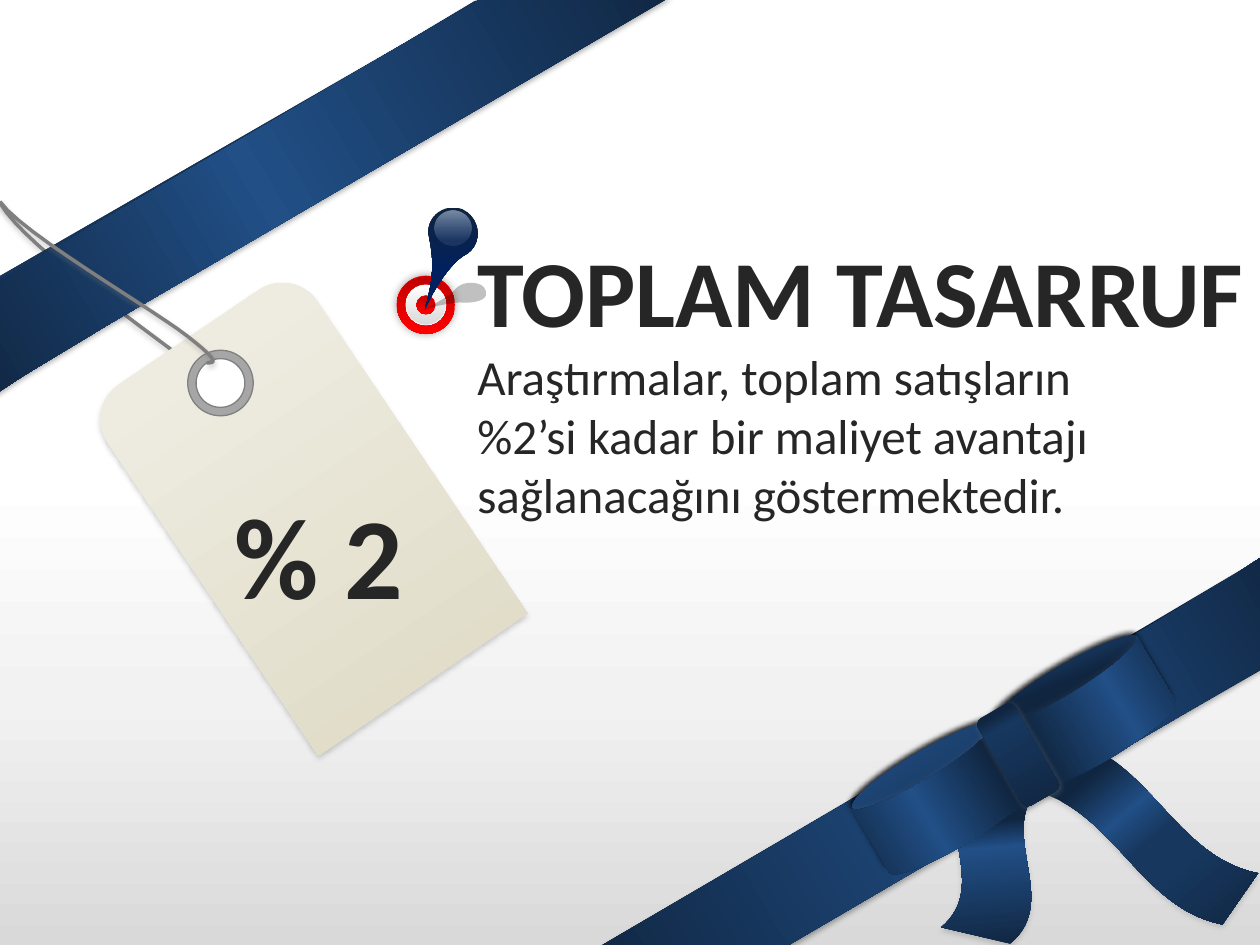
"""Builds a savings slide with ribbons, a price tag, a bow and a pinned target."""
import math
from lxml import etree
from pptx import Presentation
from pptx import util as u
from pptx.dml.color import RGBColor
from pptx.enum import shapes, text
from pptx.oxml.ns import qn

HUES = {
    "white": "FFFFFF", "pale": "F2F2F2", "mist": "D9D9D9", "ash": "A6A6A6",
    "grey": "808080", "cord": "7F7F7F", "ink": "262626", "soot": "0D0D0D",
    "black": "000000", "night": "0F243E", "navy": "10253F", "deep": "17375E",
    "blue": "214F86", "royal": "002060", "cream": "EEECE1", "sand": "DDD9C3",
    "wine": "C00000", "red": "FF0000", "sky": "9AB5E4", "haze": "C2D1ED",
    "frost": "E1E8F5",
}
KIND = shapes.MSO_SHAPE
deck = Presentation()
deck.slide_width, deck.slide_height = u.Inches(10), u.Inches(7.5)
cell = deck.slide_width / 10
slide = deck.slides.add_slide(deck.slide_layouts[6])


def draw(form, box, turn=0, fill=None, ang=0, line=None, shade=None, adj=(), flip=False):
    """Draws a preset, or an outline of points and curves, in grid cells."""
    left, top, wide, high = box
    if isinstance(form, list):
        dots = []
        for step in form:
            if len(step) == 2:
                dots.append(step)
                continue
            knots = [dots[-1], step[:2], step[2:4], step[4:]]
            for t in (n / 12 for n in range(1, 13)):
                mix = ((1 - t) ** 3, 3 * t * (1 - t) ** 2, 3 * t * t * (1 - t), t ** 3)
                dots.append(tuple(sum(m * k[i] for m, k in zip(mix, knots)) for i in (0, 1)))
        midx, midy = left + wide / 2, top + high / 2
        cos, sin = math.cos(math.radians(turn)), math.sin(math.radians(turn))
        flat = [(round((midx + (x - midx) * cos + (y - midy) * sin) * cell),
                 round((midy - (x - midx) * sin + (y - midy) * cos) * cell)) for x, y in dots]
        pen = slide.shapes.build_freeform(*flat[0])
        pen.add_line_segments(flat[1:], close=fill is not None)
        item = pen.convert_to_shape()
    else:
        item = slide.shapes.add_shape(form, *(round(v * cell) for v in box))
    item.rotation = turn
    item.shadow.inherit = False
    for i, value in enumerate(adj):
        item.adjustments[i] = value
    prop = item._element.spPr
    if flip:
        prop.find(qn("a:xfrm")).set("flipH", "1")
    if fill is None:
        item.fill.background()
    elif isinstance(fill, str):
        item.fill.solid()
        item.fill.fore_color.rgb = RGBColor.from_string(HUES[fill])
    else:
        item.fill.gradient()
        prop.find(".//" + qn("a:lin")).set("ang", str(round(ang * 60000)))
        stops = prop.find(".//" + qn("a:gsLst"))
        for old in list(stops):
            stops.remove(old)
        for place, hue, *clear in fill:
            stop = etree.SubElement(stops, qn("a:gs"), pos=str(place * 1000))
            tint = etree.SubElement(stop, qn("a:srgbClr"), val=HUES[hue])
            for share in clear:
                etree.SubElement(tint, qn("a:alpha"), val=str(share * 1000))
    if line:
        item.line.color.rgb = RGBColor.from_string(HUES[line[0]])
        item.line.width = u.Pt(line[1])
    else:
        item.line.fill.background()
    if shade:
        hue, share, blur, dist, way = shade
        cast = etree.SubElement(prop.find(qn("a:effectLst")), qn("a:outerShdw"),
                                blurRad=str(u.Pt(blur)), dist=str(u.Pt(dist)),
                                dir=str(way * 60000), algn="ctr", rotWithShape="0")
        tint = etree.SubElement(cast, qn("a:srgbClr"), val=HUES[hue])
        etree.SubElement(tint, qn("a:alpha"), val=str(share * 1000))


def write(box, rows):
    """Writes one paragraph per row of words, size and weight."""
    frame = slide.shapes.add_textbox(*(round(v * cell) for v in box)).text_frame
    frame.word_wrap = True
    frame.auto_size = text.MSO_AUTO_SIZE.SHAPE_TO_FIT_TEXT
    for i, (words, size, bold) in enumerate(rows):
        para = frame.add_paragraph() if i else frame.paragraphs[0]
        run = para.add_run()
        run.text = words
        for key, value in {"name": "Calibri", "size": u.Pt(size), "bold": bold}.items():
            setattr(run.font, key, value)
        run.font.color.rgb = RGBColor.from_string(HUES["ink"])


soft = ("grey", 35, 3.1, 1.8, 90)
dark = ("black", 35, 3.1, 1.8, 90)
thread = {"line": ("cord", 2), "shade": ("grey", 38, 3.1, 1.6, 90)}

draw(KIND.RECTANGLE, (0, 0, 10, 7.5), 180,
     [(0, "white"), (50, "white"), (74, "pale"), (100, "mist")], 270)
draw([(1.42, 2.82), (0.79, 2.35, 0.16, 1.89, 0, 1.61)], (0, 1.61, 1.42, 1.21), **thread)

base = [(5.2, 0.01), (0.87, 2.55), (-0.01, 3.07), (-0.02, 2.2), (3.21, 0.34), (3.78, 0)]
satin = [(5.32, -0.05), (0.86, 2.55), (0.18, 2.96), (-0.05, 3.11), (-0.09, 2.25), (3.84, -0.05)]
sheen = [(0, "night"), (57, "blue"), (100, "night")]
for turn, hue, edge in ((149.5, "deep", 0.25), (329.5, "night", 0.75)):
    for band, box, look in (
            (base, (-0.62, 0.84, 6.04, 0.76), {"fill": hue, "line": ("night", edge)}),
            (satin, (-0.67, 0.83, 6.24, 0.76), {"fill": sheen, "shade": dark})):
        if turn > 180:
            band = [(9.98 - x, 7.52 - y) for x, y in band]
            box = (9.98 - box[0] - box[2], 7.52 - box[1] - box[3], *box[2:])
        draw(band, box, turn, **look)

draw(KIND.WAVE, (7.22, 6.4, 1.32, 0.77), 102,
     [(0, "navy"), (54, "blue"), (68, "navy"), (100, "navy")], 17,
     shade=soft, adj=(0.134, 0.005), flip=True)
draw(KIND.WAVE, (8.14, 6.27, 1.87, 0.66), 34.8,
     [(0, "navy"), (25, "navy"), (42, "blue"), (54, "deep"), (66, "deep"), (100, "navy")], 15,
     shade=soft, adj=(0.125, 0))
for box, turn, fill, ang, shade in (
        ((8.23, 4.93, 0.7, 1.33), 59.8, [(0, "blue"), (12, "blue"), (38, "navy"), (100, "navy")],
         8, ("black", 85, 3.1, 1.8, 225)),
        ((8.28, 5.04, 0.72, 1.32), 238.9, [(0, "navy"), (24, "navy"), (64, "blue"), (100, "navy")],
         90, ("grey", 10, 3.1, 1.8, 200)),
        ((7.11, 5.61, 0.7, 1.33), 59.8, [(0, "blue"), (8, "blue"), (100, "navy")],
         356, ("black", 87, 3.1, 1.8, 225)),
        ((7.14, 5.71, 0.72, 1.33), 238.9, [(0, "navy"), (41, "blue"), (76, "navy"), (100, "navy")],
         90, ("grey", 10, 3.1, 1.8, 231))):
    draw(KIND.FLOWCHART_STORED_DATA, box, turn, fill, ang, shade=shade)
draw(KIND.ROUNDED_RECTANGLE, (7.68, 5.82, 0.8, 0.34), 60.2,
     [(0, "navy"), (16, "navy"), (27, "deep"), (100, "navy")], 1,
     shade=("grey", 43, 4, 1, 45), adj=(0.167,))

tag = [(0.95, 3.05), (2.06, 2.3), (2.21, 2.2, 2.42, 2.24, 2.52, 2.39), (4.19, 4.87),
       (2.53, 6), (0.86, 3.52), (0.75, 3.36, 0.79, 3.16, 0.95, 3.05)]
draw(tag, (1.43, 2.39, 2.01, 3.32), 326,
     [(0, "cream"), (20, "cream"), (100, "sand")], 90, shade=soft)
draw(KIND.OVAL, (1.55, 2.83, 0.41, 0.41), 326, "white", line=("white", 0.75), shade=soft)
draw(KIND.DONUT, (1.49, 2.78, 0.52, 0.52), 326, "ash", line=("grey", 0.75), adj=(0.128,))
write((1.76, 3.79, 1.61, 1.82), [("% 2", 66, True)])
draw([(1.64, 2.88), (1.7, 2.88, 1.76, 2.88, 1.49, 2.67), (1.21, 2.45, 0.17, 1.85, 0, 1.6)],
     (0, 1.6, 1.76, 1.28), **thread)

write((3.69, 1.8, 8.29, 2.42), [
    ("TOPLAM TASARRUF", 54, True),
    ("Araştırmalar, toplam satışların", 28, False),
    ("%2’si kadar bir maliyet avantajı", 28, False),
    ("sağlanacağını göstermektedir.", 28, False)])

glow, snow = [(0, "wine"), (100, "red")], [(0, "white"), (100, "mist")]
for size, fill, edge, shade in ((0.46, glow, "red", ("black", 34, 5, 0, 0)),
                                (0.32, snow, "white", None), (0.15, glow, "red", None)):
    draw(KIND.OVAL, (3.38 - size / 2, 2.42 - size / 2, size, size), 0, fill, 90,
         (edge, 0.25), shade)

shadow = [(3.84, 2.27), (3.92, 2.38, 3.74, 2.4, 3.65, 2.39), (3.55, 2.4, 3.45, 2.42, 3.35, 2.45),
          (3.45, 2.41, 3.56, 2.34, 3.61, 2.29), (3.66, 2.22, 3.8, 2.22, 3.84, 2.27)]
draw(shadow, (3.51, 2.08, 0.17, 0.52), 263.6, [(0, "soot", 25), (100, "soot", 25)])
pin = [(3.67, 1.66), (3.53, 1.61, 3.4, 1.71, 3.4, 1.84), (3.41, 1.95, 3.48, 2.1, 3.37, 2.46),
       (3.45, 2.28, 3.58, 2.09, 3.68, 2.03), (3.83, 1.96, 3.83, 1.74, 3.67, 1.66)]
draw(pin, (3.37, 1.65, 0.43, 0.81), 0, [(0, "night"), (67, "royal"), (100, "royal")], 90)
draw(KIND.OVAL, (3.45, 1.67, 0.29, 0.28), 0,
     [(0, "sky", 13), (15, "sky", 13), (100, "haze", 59)], 270)

deck.save("out.pptx")
